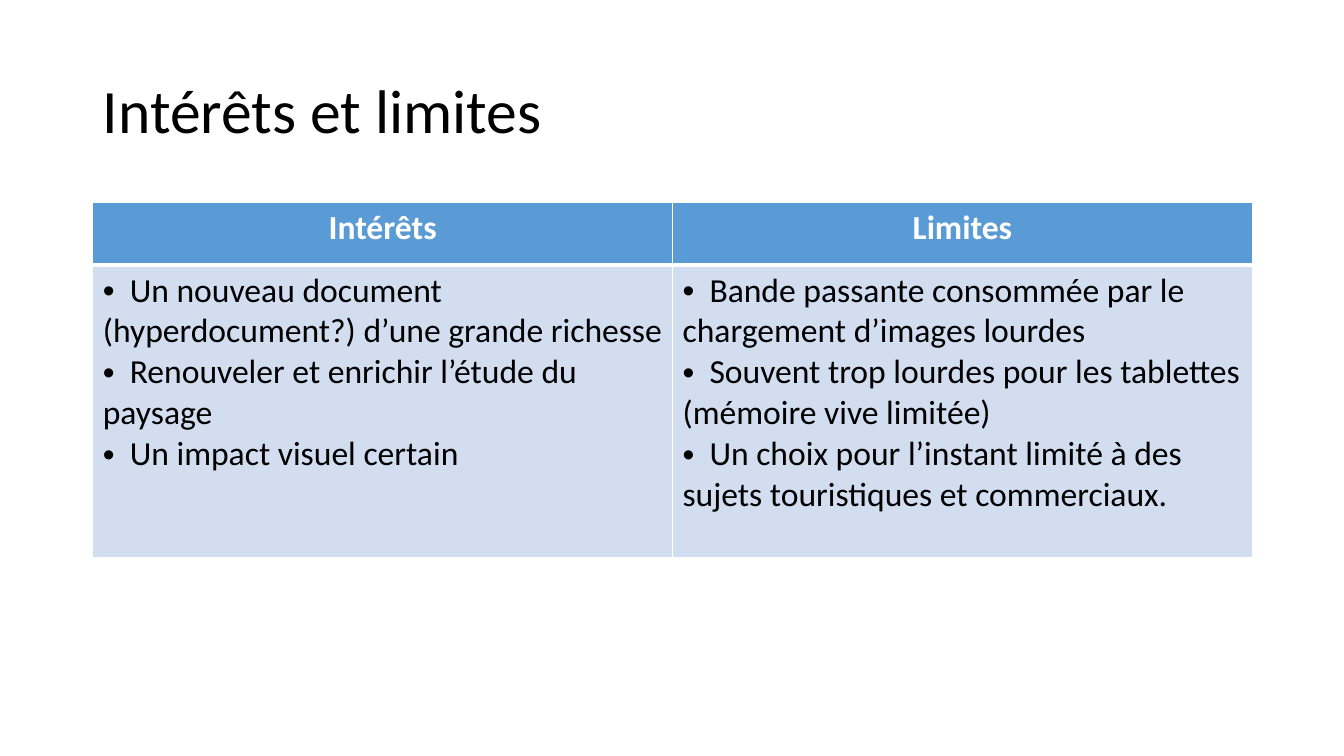
from lxml import etree
from pptx import Presentation
from pptx.dml.color import RGBColor
from pptx.enum.text import MSO_ANCHOR, MSO_AUTO_SIZE, PP_ALIGN
from pptx.oxml.ns import qn
from pptx.util import Pt

PX = 9144  # EMU per px, 100 px to the inch
FONT = "Calibri"
BLACK = RGBColor(0x00, 0x00, 0x00)
WHITE = RGBColor(0xFF, 0xFF, 0xFF)
BLUE = RGBColor(0x5B, 0x9B, 0xD5)
PALE_BLUE = RGBColor(0xD2, 0xDE, 0xEF)
LEFT, CENTER = PP_ALIGN.LEFT, PP_ALIGN.CENTER
MIDDLE = MSO_ANCHOR.MIDDLE
NO_AUTOFIT = MSO_AUTO_SIZE.NONE

MARGIN, WIDTH = 92, 1150
ROW_HEIGHTS = (62, 290)
COLUMNS = {
    "Intérêts": (
        "Un nouveau document (hyperdocument?) d’une grande richesse",
        "Renouveler et enrichir l’étude du paysage",
        "Un impact visuel certain",
    ),
    "Limites": (
        "Bande passante consommée par le chargement d’images lourdes",
        "Souvent trop lourdes pour les tablettes (mémoire vive limitée)",
        "Un choix pour l’instant limité à des sujets touristiques et commerciaux.",
    ),
}


def px(n):
    return int(n * PX)


def add_run(p, text, size, color, bold=False):
    r = p.add_run()
    r.text = text
    r.font.name, r.font.size, r.font.bold = FONT, Pt(size), bold
    r.font.color.rgb = color


def add_bullet(p):
    pPr = p._p.get_or_add_pPr()
    pPr.set("marL", "0")
    pPr.set("indent", "0")
    etree.SubElement(pPr, qn("a:buFont"), typeface="Arial")
    etree.SubElement(pPr, qn("a:buChar"), char="•")


def set_borders(cell, **widths):
    tcPr = cell._tc.get_or_add_tcPr()
    for side in "LRTB":
        ln = etree.SubElement(tcPr, qn(f"a:ln{side}"), w=str(Pt(widths.get(side, 1))))
        fill = etree.SubElement(ln, qn("a:solidFill"))
        etree.SubElement(fill, qn("a:srgbClr"), val=str(WHITE))


def set_fill(cell, color):
    cell.fill.solid()
    cell.fill.fore_color.rgb = color


def fill_header(cell, text):
    set_borders(cell, B=3)
    set_fill(cell, BLUE)
    p = cell.text_frame.paragraphs[0]
    p.alignment = CENTER
    add_run(p, text, 24, WHITE, bold=True)


def fill_list(cell, items):
    set_borders(cell, T=3)
    set_fill(cell, PALE_BLUE)
    tf = cell.text_frame
    for i, item in enumerate(items):
        p = tf.add_paragraph() if i else tf.paragraphs[0]
        add_bullet(p)
        # The text wraps under the bullet, so the gap is part of the wording
        add_run(p, "  " + item, 24, BLACK)


def set_title(s, text):
    sp = s.shapes.title
    sp.left, sp.top, sp.width, sp.height = px(MARGIN), px(40), px(WIDTH), px(145)
    tf = sp.text_frame
    tf.word_wrap, tf.auto_size = True, NO_AUTOFIT
    tf.vertical_anchor = MIDDLE
    p = tf.paragraphs[0]
    p.alignment, p.line_spacing = LEFT, 0.9
    add_run(p, text, 44, BLACK)


def add_comparison(s):
    table = s.shapes.add_table(
        len(ROW_HEIGHTS), len(COLUMNS),
        px(MARGIN), px(201), px(WIDTH), px(sum(ROW_HEIGHTS))).table
    table.first_row = table.horz_banding = False
    for row, height in zip(table.rows, ROW_HEIGHTS):
        row.height = px(height)
    for i, (header, items) in enumerate(COLUMNS.items()):
        table.columns[i].width = px(WIDTH / len(COLUMNS))
        fill_header(table.cell(0, i), header)
        fill_list(table.cell(1, i), items)


def main():
    prs = Presentation()
    prs.slide_width, prs.slide_height = px(1333), px(750)
    s = prs.slides.add_slide(prs.slide_layouts[5])  # title only

    # Title
    set_title(s, "Intérêts et limites")

    # Table of benefits and limits
    add_comparison(s)

    prs.save("out.pptx")


if __name__ == "__main__":
    main()
